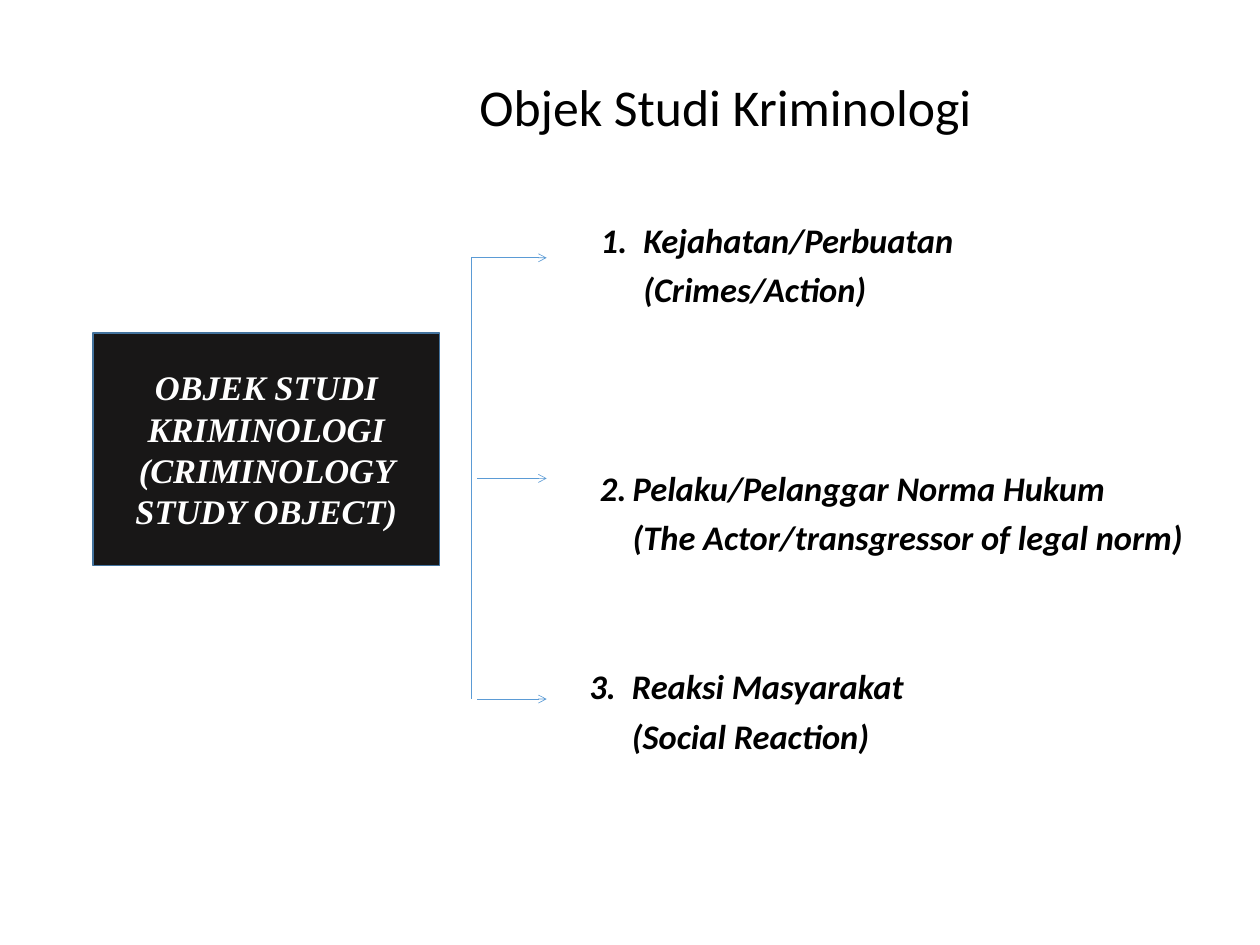
from dataclasses import dataclass

from lxml import etree
from pptx import Presentation
from pptx import util as u
from pptx.dml.color import RGBColor
from pptx.enum import shapes, text
from pptx.oxml.ns import qn


@dataclass(frozen=True)
class Theme:
    ink = RGBColor(0, 0, 0)
    paper = RGBColor(255, 255, 255)
    box_fill = RGBColor(0x18, 0x17, 0x17)
    box_line = RGBColor(0x43, 0x73, 0x9E)
    branch = RGBColor(0x5B, 0x9B, 0xD5)
    body_font = "Calibri"
    box_font = "Times New Roman"
    title_size = u.Pt(42)
    body_size = u.Pt(28)


theme = Theme()
presentation = Presentation()
presentation.slide_width = u.Inches(14.22)
presentation.slide_height = u.Inches(10.67)
slide = presentation.slides.add_slide(presentation.slide_layouts[5])
column = presentation.slide_width / 100
row = presentation.slide_height / 75


def place(left, top, width, height):
    return [round(n) for n in (left * column, top * row, width * column, height * row)]


def add_branch(x1, y1, x2, y2, arrow):
    line = slide.shapes.add_connector(
        shapes.MSO_CONNECTOR.STRAIGHT, *place(x1, y1, x2, y2))
    line.line.color.rgb = theme.branch
    line.line.width = u.Pt(0.5)
    properties = line._element.spPr
    etree.SubElement(properties, qn("a:effectLst"))
    if arrow:
        etree.SubElement(properties.find(qn("a:ln")), qn("a:tailEnd"), type="arrow")


title = slide.shapes.title
title.left, title.top, title.width, title.height = place(37.34, 5.56, 47.05, 5.7)
title.text_frame.text = "Objek Studi Kriminologi"
title.text_frame.vertical_anchor = text.MSO_ANCHOR.MIDDLE
paragraph = title.text_frame.paragraphs[0]
paragraph.alignment = text.PP_ALIGN.LEFT
paragraph.font.name = theme.body_font
paragraph.font.size = theme.title_size
paragraph.font.color.rgb = theme.ink

box = slide.shapes.add_shape(
    shapes.MSO_SHAPE.RECTANGLE, *place(7.38, 26.44, 27.5, 18.42))
box.shadow.inherit = False
box.fill.solid()
box.fill.fore_color.rgb = theme.box_fill
box.line.color.rgb = theme.box_line
box.line.width = u.Pt(1)
box.text_frame.word_wrap = True
box.text_frame.vertical_anchor = text.MSO_ANCHOR.MIDDLE
box.text_frame.text = "OBJEK STUDI KRIMINOLOGI\n(CRIMINOLOGY STUDY OBJECT)"
for paragraph in box.text_frame.paragraphs:
    paragraph.alignment = text.PP_ALIGN.CENTER
    paragraph.font.name = theme.box_font
    paragraph.font.size = theme.body_size
    paragraph.font.bold = paragraph.font.italic = True
    paragraph.font.color.rgb = theme.paper

trunk, tip, first_row, row_gap = 37.41, 43.39, 20.46, 17.51
add_branch(trunk, first_row, trunk, first_row + 2 * row_gap, False)
for index, start in enumerate((trunk, 37.87, 37.87)):
    y = first_row + index * row_gap
    add_branch(start, y, tip, y, True)

study_objects = (
    (47.68, 17.72, 3.38, "Kejahatan/Perbuatan", "(Crimes/Action)"),
    (47.61, 37.41, 2.6, "Pelaku/Pelanggar Norma Hukum",
     "(The Actor/transgressor of legal norm)"),
    (46.77, 53.16, 3.38, "Reaksi Masyarakat", "(Social Reaction)"),
)
for number, (left, top, hang, name, translation) in enumerate(study_objects, 1):
    item = slide.shapes.add_textbox(*place(left, top, 50, 7))
    frame = item.text_frame
    frame.word_wrap = True
    frame.margin_left = frame.margin_right = frame.margin_top = frame.margin_bottom = 0
    frame.text = f"{number}.\t{name}\n{translation}"
    indent = round(hang * column)
    for paragraph, first_line, space in zip(frame.paragraphs, (-indent, 0), (0, 10)):
        properties = paragraph._p.get_or_add_pPr()
        properties.set("marL", str(indent))
        properties.set("indent", str(first_line))
        paragraph.line_spacing = 0.9
        paragraph.space_before = u.Pt(space)
        paragraph.font.name = theme.body_font
        paragraph.font.size = theme.body_size
        paragraph.font.bold = paragraph.font.italic = True
        paragraph.font.color.rgb = theme.ink

presentation.save("out.pptx")
